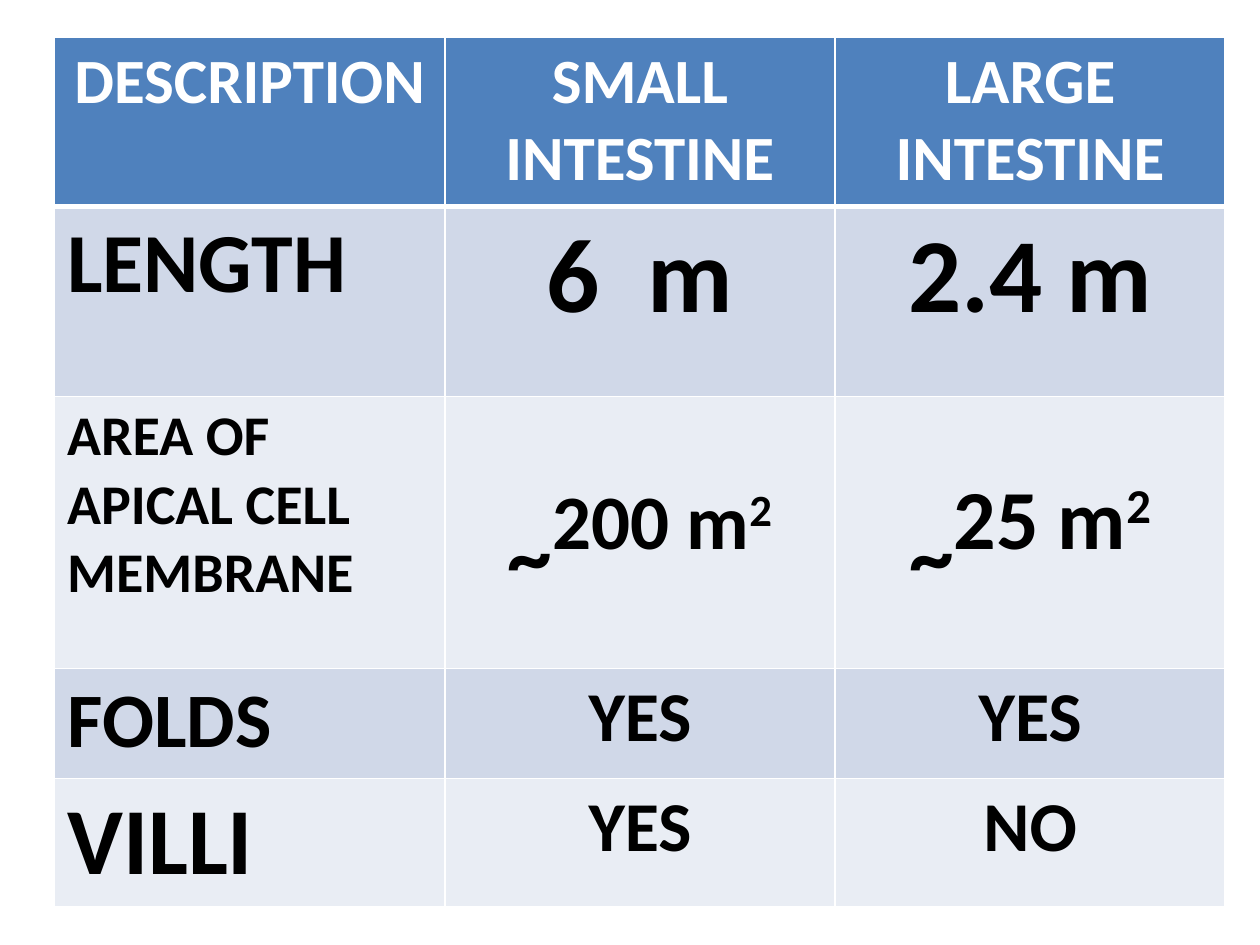
from lxml.etree import SubElement
from pptx import Presentation
from pptx.dml.color import RGBColor
from pptx.enum.text import PP_ALIGN as Align
from pptx.oxml.ns import qn
from pptx.util import Pt

WHITE, BLACK = "FFFFFF", "000000"
HEADER_FILL = "4F81BD"
BAND_FILLS = ["D0D8E8", "E9EDF4"]
LEFT, TOP, COL_WIDTH = 31.2, 21, 223
ROW_HEIGHTS = [97, 108.5, 155.5, 63, 63]


def area(value, size):
    return [[("~", 88, -25), (value, size, 0), ("2", size, 30)]]


def plain(size, *lines):
    return [[(line, size, 0)] for line in lines]


ROWS = [
    [plain(36, "DESCRIPTION"), plain(36, "SMALL INTESTINE"), plain(36, "LARGE INTESTINE")],
    [plain(48, "LENGTH"), plain(60, "6  m"), plain(60, "2.4 m")],
    [plain(32, "AREA OF APICAL CELL", "MEMBRANE"), area("200 m", 44), area("25 m", 48)],
    [plain(44, "FOLDS"), plain(40, "YES"), plain(40, "YES")],
    [plain(54, "VILLI"), plain(40, "YES"), plain(40, "NO")],
]


def rgb(value):
    return RGBColor.from_string(value)


def set_borders(cell, top, bottom):
    tc_pr = cell._tc.get_or_add_tcPr()
    for side, width in (("L", 1), ("R", 1), ("T", top), ("B", bottom)):
        ln = SubElement(tc_pr, qn(f"a:ln{side}"), w=str(Pt(width)))
        fill = SubElement(ln, qn("a:solidFill"))
        SubElement(fill, qn("a:srgbClr"), val=WHITE)


def write_cell(cell, paragraphs, color, align):
    tf = cell.text_frame
    for i, runs in enumerate(paragraphs):
        p = tf.paragraphs[0] if i == 0 else tf.add_paragraph()
        p.alignment = align
        for text, size, baseline in runs:
            r = p.add_run()
            r.text = text
            r.font.name = "Calibri"
            r.font.size = Pt(size)
            r.font.bold = True
            r.font.color.rgb = rgb(color)
            if baseline:
                r._r.get_or_add_rPr().set("baseline", str(baseline * 1000))


def main():
    prs = Presentation()
    prs.slide_width, prs.slide_height = Pt(720), Pt(540)
    s = prs.slides.add_slide(prs.slide_layouts[6])
    cols = len(ROWS[0])
    table = s.shapes.add_table(len(ROWS), cols, Pt(LEFT), Pt(TOP),
                               Pt(COL_WIDTH * cols), Pt(sum(ROW_HEIGHTS))).table
    table.horz_banding = False
    for col in table.columns:
        col.width = Pt(COL_WIDTH)
    for i, (row, height) in enumerate(zip(ROWS, ROW_HEIGHTS)):
        table.rows[i].height = Pt(height)
        header = i == 0
        for j, paragraphs in enumerate(row):
            cell = table.cell(i, j)
            set_borders(cell, 3 if i == 1 else 1, 3 if header else 1)
            cell.fill.solid()
            cell.fill.fore_color.rgb = rgb(HEADER_FILL if header else BAND_FILLS[(i - 1) % 2])
            align = Align.CENTER if header or j else Align.LEFT
            write_cell(cell, paragraphs, WHITE if header else BLACK, align)
    prs.save("out.pptx")


if __name__ == "__main__":
    main()
